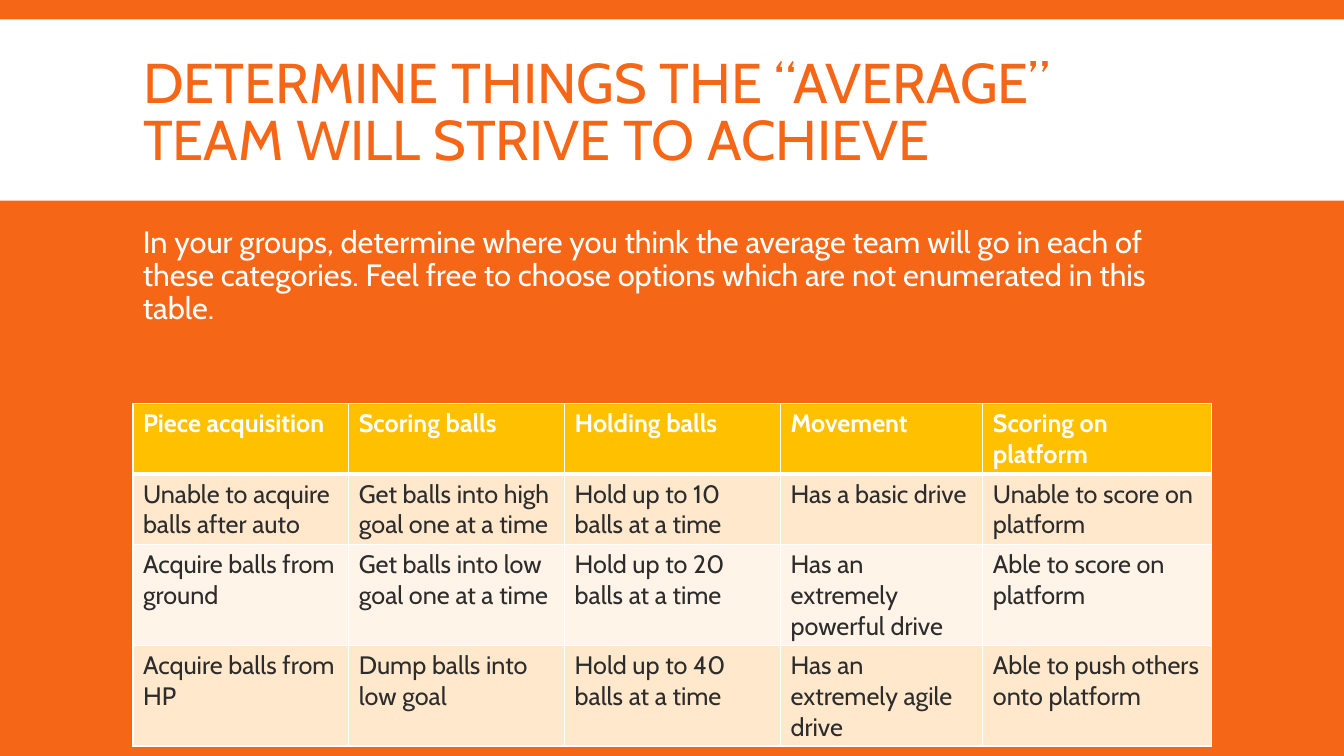
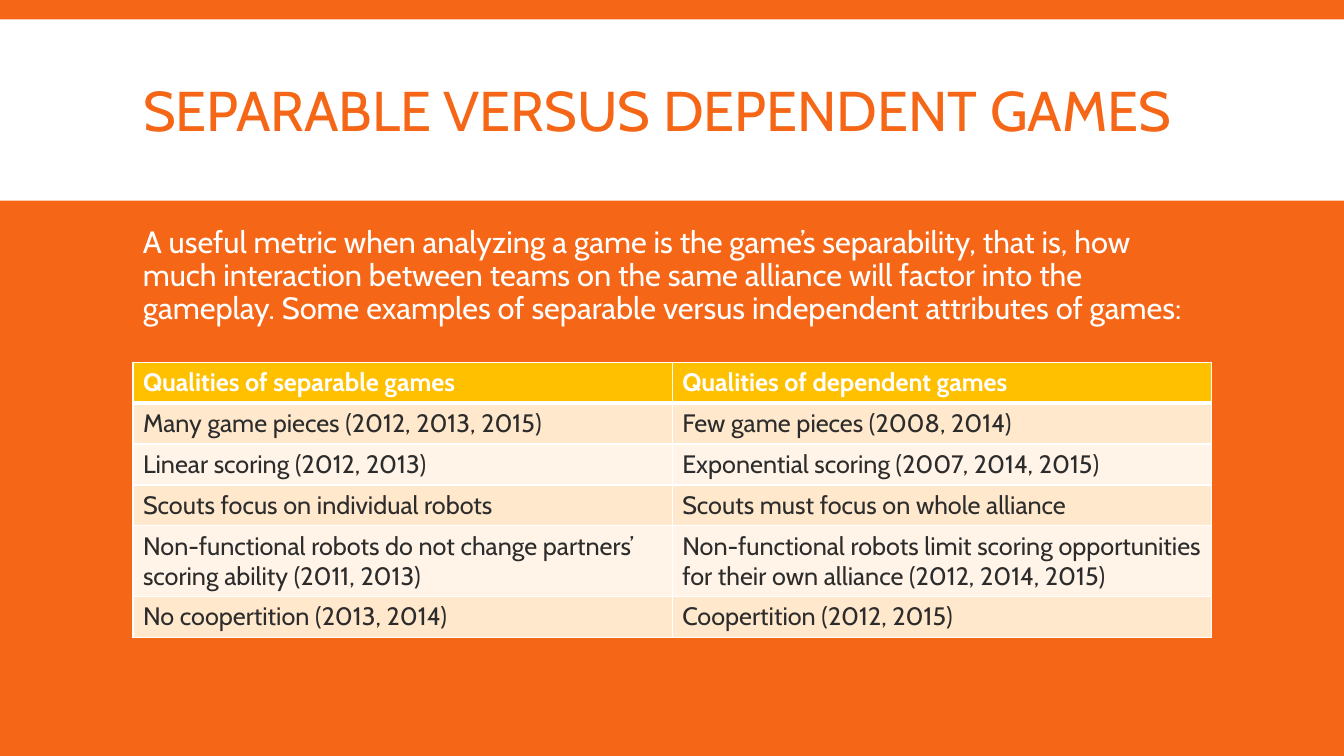
import pptx
import pptx.util
import pptx.dml.color
import pptx.enum.shapes
import pptx.enum.text
import pptx.oxml.ns
import lxml.etree

Cm = pptx.util.Cm
Pt = pptx.util.Pt

HUES = {
    "orange": "F56617",
    "white": "FFFFFF",
    "gold": "FFC000",
    "ink": "2C2C2C",
    "peach": "FFE8CC",
    "cream": "FFF4E7",
}
WIDE, HIGH = 33.87, 19.05
LEFT, SPAN = 3.35, 27.18

ANCHOR = pptx.enum.text.MSO_ANCHOR
ALIGN = pptx.enum.text.PP_ALIGN
TITLE = {
    "hue": "orange",
    "font": {"name": "Cabin", "size": Pt(40), "bold": False},
    "para": {"line_spacing": 0.85, "alignment": ALIGN.LEFT},
    "frame": {"word_wrap": True, "vertical_anchor": ANCHOR.MIDDLE},
}
BODY = {
    "hue": "white",
    "font": {"name": "Cabin", "size": Pt(22)},
    "para": {"line_spacing": 0.9, "space_before": Pt(12), "space_after": Pt(2)},
    "frame": {"word_wrap": True, "vertical_anchor": ANCHOR.TOP},
}
HEAD = {
    "hue": "white",
    "font": {"name": "Cabin", "size": Pt(18), "bold": True},
}
CELL = {
    "hue": "ink",
    "font": {"name": "Cabin", "size": Pt(18), "bold": False},
}


def apply(item, values):
    for key, value in values.items():
        setattr(item, key, value)


def color(name):
    return pptx.dml.color.RGBColor.from_string(HUES[name])


def paint(fill, name):
    fill.solid()
    fill.fore_color.rgb = color(name)


class Deck:
    def __init__(self):
        self.show = pptx.Presentation()
        self.show.slide_width = Cm(WIDE)
        self.show.slide_height = Cm(HIGH)
        paint(self.show.slide_master.background.fill, "orange")
        self.slide = None

    def label(self, frame, text, style):
        frame.text = text
        apply(frame, style.get("frame", {}))
        para = frame.paragraphs[0]
        apply(para, style.get("para", {}))
        font = para.runs[0].font
        apply(font, style["font"])
        font.color.rgb = color(style["hue"])

    def page(self, title):
        self.slide = self.show.slides.add_slide(self.show.slide_layouts[5])
        self.band()
        holder = self.slide.shapes.title
        apply(holder, {"left": Cm(LEFT), "top": Cm(0.79),
                       "width": Cm(SPAN), "height": Cm(4.19)})
        self.label(holder.text_frame, title, TITLE)

    def band(self):
        kind = pptx.enum.shapes.MSO_SHAPE.RECTANGLE
        shape = self.slide.shapes.add_shape(
            kind, 0, Cm(0.49), Cm(WIDE), Cm(4.57))
        shape.shadow.inherit = False
        paint(shape.fill, "white")
        shape.line.fill.background()
        self.slide.shapes._spTree.insert(2, shape._element)

    def body(self, text):
        box = self.slide.shapes.add_textbox(
            Cm(LEFT), Cm(5.59), Cm(SPAN), Cm(11.68))
        self.label(box.text_frame, text, BODY)

    def border(self, cell, row):
        props = cell._tc.get_or_add_tcPr()
        name = pptx.oxml.ns.qn
        thick = {"L": 1, "R": 1, "T": 3 if row == 1 else 1,
                 "B": 3 if row == 0 else 1}
        for side, width in thick.items():
            line = lxml.etree.SubElement(
                props, name("a:ln" + side), w=str(Pt(width)))
            fill = lxml.etree.SubElement(line, name("a:solidFill"))
            lxml.etree.SubElement(fill, name("a:srgbClr"), val=HUES["white"])

    def table(self, top, widths, rows, tall=1.03):
        grid = self.slide.shapes.add_table(
            len(rows), len(widths), Cm(LEFT), Cm(top),
            Cm(SPAN), Cm(tall * len(rows))).table
        for col, width in zip(grid.columns, widths):
            col.width = Cm(width)
        for r, texts in enumerate(rows):
            shade = "gold" if r == 0 else ("cream", "peach")[r % 2]
            for c, text in enumerate(texts):
                cell = grid.cell(r, c)
                self.border(cell, r)
                paint(cell.fill, shade)
                self.label(cell.text_frame, text, CELL if r else HEAD)


def main():
    deck = Deck()

    deck.page("DETERMINE THINGS THE “AVERAGE” TEAM WILL STRIVE TO ACHIEVE")
    deck.body("In your groups, determine where you think the average team "
              "will go in each of these categories. Feel free to choose "
              "options which are not enumerated in this table.")
    deck.table(10.16, [5.44, 5.44, 5.44, 5.1, 5.76], [
        ["Piece acquisition", "Scoring balls", "Holding balls",
         "Movement", "Scoring on platform"],
        ["Unable to acquire balls after auto",
         "Get balls into high goal one at a time",
         "Hold up to 10 balls at a time",
         "Has a basic drive", "Unable to score on platform"],
        ["Acquire balls from ground",
         "Get balls into low goal one at a time",
         "Hold up to 20 balls at a time",
         "Has an extremely powerful drive", "Able to score on platform"],
        ["Acquire balls from HP", "Dump balls into low goal",
         "Hold up to 40 balls at a time",
         "Has an extremely agile drive", "Able to push others onto platform"],
    ])

    deck.page("SEPARABLE VERSUS DEPENDENT GAMES")
    deck.body("A useful metric when analyzing a game is the game’s "
              "separability, that is, how much interaction between teams on "
              "the same alliance will factor into the gameplay. Some examples "
              "of separable versus independent attributes of games:")
    deck.table(9.13, [SPAN / 2] * 2, [
        ["Qualities of separable games", "Qualities of dependent games"],
        ["Many game pieces (2012, 2013, 2015)",
         "Few game pieces (2008, 2014)"],
        ["Linear scoring (2012, 2013)",
         "Exponential scoring (2007, 2014, 2015)"],
        ["Scouts focus on individual robots",
         "Scouts must focus on whole alliance"],
        ["Non-functional robots do not change partners’ scoring ability "
         "(2011, 2013)",
         "Non-functional robots limit scoring opportunities for their own "
         "alliance (2012, 2014, 2015)"],
        ["No coopertition (2013, 2014)", "Coopertition (2012, 2015)"],
    ])

    deck.show.save("out.pptx")


if __name__ == "__main__":
    main()
